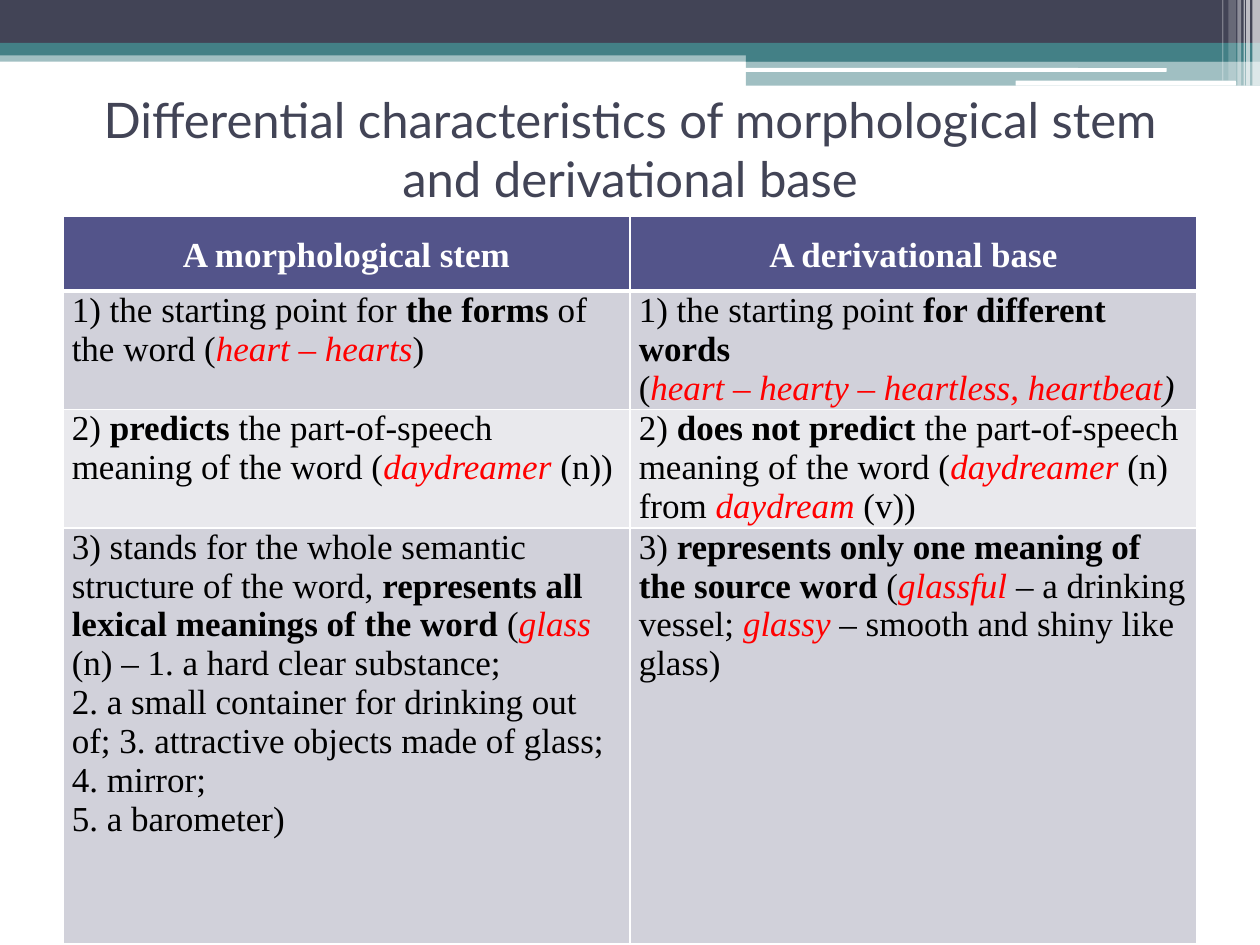
from typing import NamedTuple

from lxml.etree import SubElement
from pptx import Presentation
from pptx.dml.color import RGBColor
from pptx.enum.shapes import MSO_SHAPE
from pptx.enum.text import MSO_ANCHOR, PP_ALIGN
from pptx.oxml.ns import qn
from pptx.util import Inches, Pt

WHITE = RGBColor(0xFF, 0xFF, 0xFF)
BLACK = RGBColor(0, 0, 0)
RED = RGBColor(0xFF, 0, 0)
DARK = RGBColor(0x42, 0x44, 0x56)
TEAL = RGBColor(0x43, 0x80, 0x86)
HEAD = RGBColor(0x53, 0x54, 0x8A)
BAND = RGBColor(0xD1, 0xD1, 0xDA)
PALE = RGBColor(0xE9, 0xE9, 0xED)
SERIF = "Times New Roman"


class Bar(NamedTuple):
    left: float
    top: float
    width: float
    height: float
    color: RGBColor
    alpha: int = 100
    kind: MSO_SHAPE = MSO_SHAPE.RECTANGLE


class Run(NamedTuple):
    text: str
    bold: bool = False
    italic: bool = False
    color: RGBColor = BLACK


def bold(text: str) -> Run:
    return Run(text, bold=True)


def sample(text: str) -> Run:
    return Run(text, italic=True, color=RED)


ROUND = MSO_SHAPE.ROUNDED_RECTANGLE
BARS = [
    # Bands across the top
    Bar(0, 0.4, 10, 0.09, TEAL, 50),
    Bar(0, 0, 10, 0.34, DARK),
    Bar(0, 0.34, 10, 0.1, TEAL),
    Bar(5.92, 0.39, 4.08, 0.1, TEAL),
    Bar(5.92, 0.48, 4.08, 0.2, TEAL, 50),
    Bar(5.91, 0.54, 3.35, 0.03, WHITE, kind=ROUND),
    Bar(8.06, 0.64, 1.75, 0.04, WHITE, kind=ROUND),
    # Thin stripes at the right edge
    Bar(9.94, 0, 0.06, 0.68, WHITE, 65),
    Bar(9.89, 0, 0.03, 0.68, WHITE, 65),
    Bar(9.87, 0, 0.01, 0.68, WHITE, 60),
    Bar(9.82, 0, 0.03, 0.68, WHITE, 40),
    Bar(9.75, 0, 0.06, 0.64, WHITE, 20),
    Bar(9.7, 0, 0.01, 0.64, WHITE, 30),
]

# Each cell is a list of paragraphs, each paragraph a list of runs
ROWS = [
    [
        [[Run("1) the starting point for "), bold("the forms"), Run(" of the word ("),
          sample("heart – hearts"), Run(")")]],
        [[Run("1) the starting point "), bold("for different words")],
         [Run("("), sample("heart – hearty – heartless, heartbeat"),
          Run(")", italic=True)]],
    ],
    [
        [[Run("2) "), bold("predicts"),
          Run(" the part-of-speech meaning of the word ("),
          sample("daydreamer "), Run("(n))")]],
        [[Run("2) "), bold("does not predict"),
          Run(" the part-of-speech meaning of the word ("),
          sample("daydreamer"), Run(" (n) from "), sample("daydream"), Run(" (v))")]],
    ],
    [
        [[Run("3) stands for the whole semantic structure of the word, "),
          bold("represents all lexical meanings of the word"), Run(" ("),
          sample("glass"), Run(" (n) – 1. a hard clear substance;")],
         [Run("2. a small container for drinking out of; "
              "3. attractive objects made of glass;")],
         [Run("4. mirror;")],
         [Run("5. a barometer)")]],
        [[Run("3) "), bold("represents only one meaning of the source word"),
          Run(" ("), sample("glassful "), Run("– a drinking vessel; "),
          sample("glassy "), Run("– smooth and shiny like glass)")]],
    ],
]
HEADS = ["A morphological stem", "A derivational base"]
HEIGHTS = [0.59, 0.94, 0.94, 3.3]


def write(frame, text: list[list[Run]], *, font: str = SERIF, size: int = 20,
          align=PP_ALIGN.LEFT, space: float = 1.0) -> None:
    for n, line in enumerate(text):
        para = frame.paragraphs[0] if n == 0 else frame.add_paragraph()
        para.alignment = align
        para.line_spacing = space
        for part in line:
            run = para.add_run()
            run.text = part.text
            run.font.name = font
            run.font.size = Pt(size)
            run.font.bold = part.bold
            run.font.italic = part.italic
            run.font.color.rgb = part.color


def draw_bar(slide, bar: Bar) -> None:
    shape = slide.shapes.add_shape(bar.kind, Inches(bar.left), Inches(bar.top),
                                   Inches(bar.width), Inches(bar.height))
    shape.shadow.inherit = False
    shape.line.fill.background()
    shape.fill.solid()
    shape.fill.fore_color.rgb = bar.color
    if bar.alpha < 100:
        tint = shape.element.spPr.find(qn("a:solidFill"))[0]
        SubElement(tint, qn("a:alpha"), val=str(bar.alpha * 1000))


def style_cell(cell, fill: RGBColor, top: int, base: int) -> None:
    cell.margin_left = cell.margin_right = Inches(0.07)
    cell.margin_top = cell.margin_bottom = 0
    # Borders come before the fill in the cell's XML
    props = cell._tc.get_or_add_tcPr()
    for side, width in (("L", 1), ("R", 1), ("T", top), ("B", base)):
        line = SubElement(props, qn(f"a:ln{side}"), w=str(Pt(width)))
        paint = SubElement(line, qn("a:solidFill"))
        SubElement(paint, qn("a:srgbClr"), val=str(WHITE))
    cell.fill.solid()
    cell.fill.fore_color.rgb = fill


def draw_table(slide) -> None:
    table = slide.shapes.add_table(len(HEIGHTS), 2, Inches(0.5), Inches(1.72),
                                   Inches(9), Inches(sum(HEIGHTS))).table
    for row, height in zip(table.rows, HEIGHTS):
        row.height = Inches(height)
    for col, head in enumerate(HEADS):
        table.columns[col].width = Inches(4.5)
        cell = table.cell(0, col)
        style_cell(cell, HEAD, 1, 3)
        write(cell.text_frame, [[Run(head, bold=True, color=WHITE)]],
              align=PP_ALIGN.CENTER, space=1.5)
        for n, row in enumerate(ROWS, 1):
            cell = table.cell(n, col)
            style_cell(cell, BAND if n % 2 else PALE, 3 if n == 1 else 1, 1)
            write(cell.text_frame, row[col])


def main() -> None:
    deck = Presentation()
    deck.slide_width, deck.slide_height = Inches(10), Inches(7.5)
    slide = deck.slides.add_slide(deck.slide_layouts[5])
    for bar in BARS:
        draw_bar(slide, bar)

    # Title, in front of the bands
    title = slide.shapes.title
    title.element.getparent().append(title.element)
    title.left, title.top = Inches(0.5), Inches(0.55)
    title.width, title.height = Inches(9), Inches(1.25)
    title.text_frame.vertical_anchor = MSO_ANCHOR.MIDDLE
    name = "Differential characteristics of morphological stem and derivational base"
    write(title.text_frame, [[Run(name, color=DARK)]], font="Lato", size=28,
          align=PP_ALIGN.CENTER)

    draw_table(slide)
    deck.save("out.pptx")


if __name__ == "__main__":
    main()
